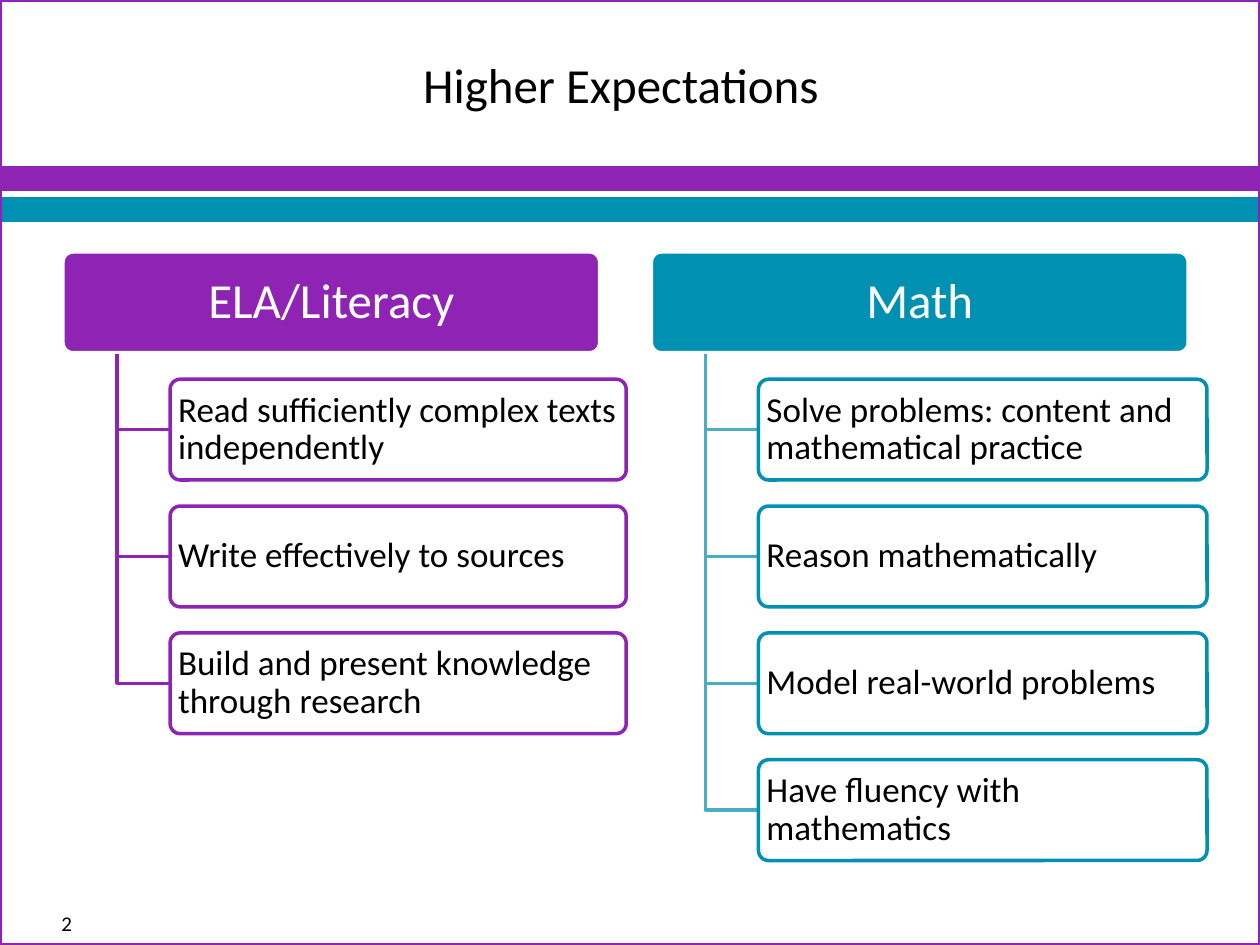
"""Build the Higher Expectations slide: two headed columns of linked boxes."""
from pptx import Presentation
from pptx.dml.color import RGBColor
from pptx.enum.shapes import MSO_SHAPE
from pptx.enum.text import MSO_ANCHOR, PP_ALIGN
from pptx.oxml.ns import qn
from pptx.util import Inches, Pt
from lxml.etree import SubElement

PURPLE = RGBColor(0x8F, 0x23, 0xB3)
TEAL = RGBColor(0x00, 0x91, 0xB2)
AQUA = RGBColor(0x4B, 0xAC, 0xC6)
WHITE = RGBColor(0xFF, 0xFF, 0xFF)
BLACK = RGBColor(0, 0, 0)


def paint(shape, fill, line, width=2):
    shape.shadow.inherit = False
    if fill is None:
        shape.fill.background()
    else:
        shape.fill.solid()
        shape.fill.fore_color.rgb = fill
    shape.line.color.rgb = line
    shape.line.width = Pt(width)


def write(shape, text, size, color, align, pad, anchor=MSO_ANCHOR.MIDDLE):
    frame = shape.text_frame
    frame.word_wrap = True
    frame.vertical_anchor = anchor
    frame.margin_left = frame.margin_right = Inches(pad[0])
    frame.margin_top = frame.margin_bottom = Inches(pad[1])
    para = frame.paragraphs[0]
    para.alignment = align
    run = para.add_run()
    run.text = text
    run.font.name = "Calibri"
    run.font.size = Pt(size)
    run.font.color.rgb = color
    return para


deck = Presentation()
deck.slide_width = Inches(10)
deck.slide_height = Inches(7.5)
slide = deck.slides.add_slide(deck.slide_layouts[6])
shapes = slide.shapes

for top, color in ((1.33, PURPLE), (1.58, TEAL)):
    band = shapes.add_shape(MSO_SHAPE.RECTANGLE, 0, Inches(top), Inches(10), Inches(0.17))
    paint(band, color, color)
border = shapes.add_shape(MSO_SHAPE.RECTANGLE, 0, 0, Inches(10), Inches(7.5))
paint(border, None, PURPLE, 2.25)

title = shapes.add_textbox(Inches(3.08), 0, Inches(6.92), Inches(1.33))
para = write(title, "Higher Expectations", 28, BLACK, PP_ALIGN.LEFT, (0.1, 0.05))
para._p.get_or_add_pPr().set("marL", str(Inches(0.18)))
number = shapes.add_textbox(0, Inches(7.18), Inches(0.67), Inches(0.32))
write(number, "2", 12, BLACK, PP_ALIGN.RIGHT, (0.1, 0.05), MSO_ANCHOR.TOP)

columns = (
    (0.5, 3.62, "ELA/Literacy", PURPLE, PURPLE, (
        "Read sufficiently complex texts independently",
        "Write effectively to sources",
        "Build and present knowledge through research")),
    (5.17, 3.56, "Math", TEAL, AQUA, (
        "Solve problems: content and mathematical practice",
        "Reason mathematically",
        "Model real-world problems",
        "Have fluency with mathematics")),
)
tall = Inches(0.8)
step = Inches(3.02) // 3

for left, width, name, color, link, items in columns:
    head = shapes.add_shape(MSO_SHAPE.ROUNDED_RECTANGLE, Inches(left), Inches(2),
                            Inches(4.26), tall)
    head.adjustments[0] = 0.1
    paint(head, color, WHITE)
    write(head, name, 28, WHITE, PP_ALIGN.CENTER, (0.06, 0.04)).line_spacing = 0.9

    stem = Inches(left + 0.43)
    side = Inches(left + 0.85)
    for row, text in enumerate(items):
        top = Inches(3.01) + row * step
        mid = top + tall // 2
        path = shapes.build_freeform(stem, Inches(2.81))
        path.add_line_segments([(stem, mid), (side, mid)], close=False)
        paint(path.convert_to_shape(), None, link)

        box = shapes.add_shape(MSO_SHAPE.ROUNDED_RECTANGLE, side, top, Inches(width), tall)
        box.adjustments[0] = 0.1
        paint(box, WHITE, color)
        tint = box._element.spPr.find(qn("a:solidFill"))[0]
        SubElement(tint, qn("a:alpha")).set("val", "90000")
        write(box, text, 20, BLACK, PP_ALIGN.LEFT, (0.04, 0.03)).line_spacing = 0.9

deck.save("out.pptx")
